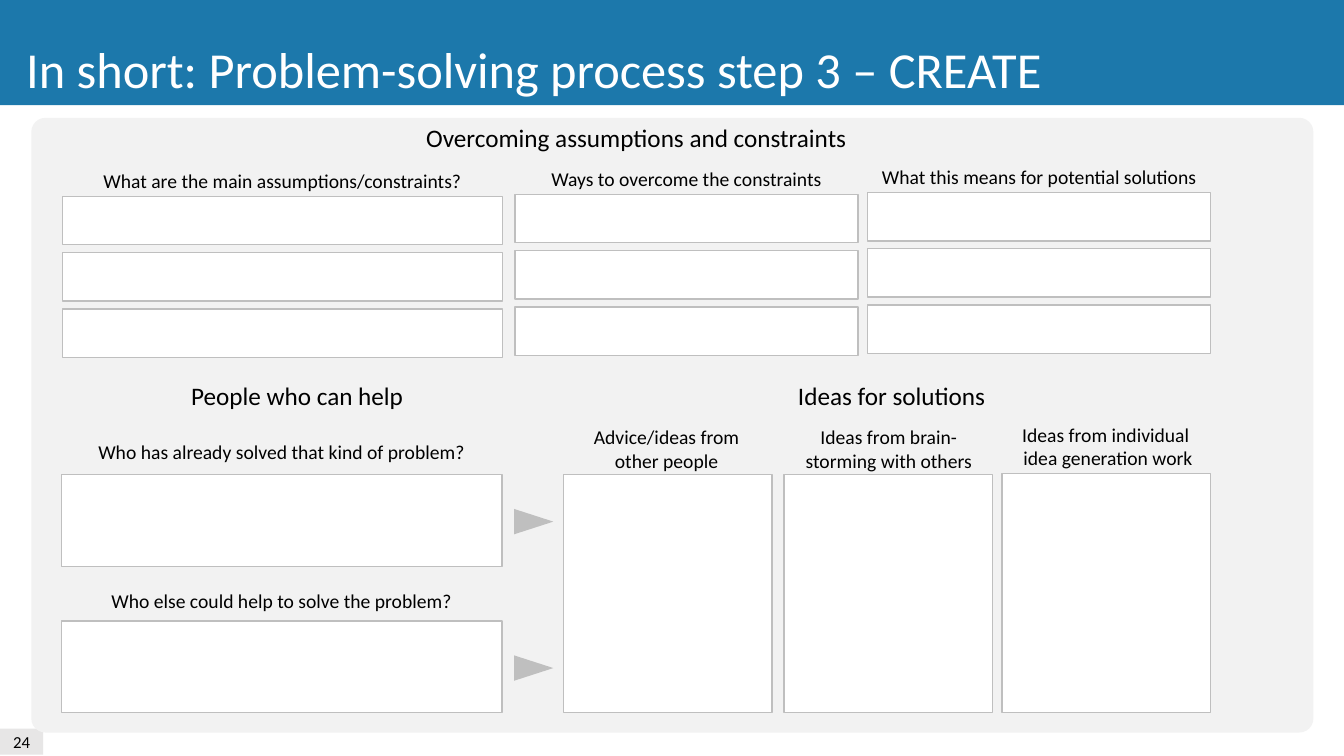
from dataclasses import dataclass

import pptx
import pptx.dml.color
import pptx.enum.shapes
import pptx.enum.text
import pptx.util

Cm = pptx.util.Cm
Pt = pptx.util.Pt
SHAPE = pptx.enum.shapes.MSO_SHAPE
ALIGN = pptx.enum.text.PP_ALIGN
ANCHOR = pptx.enum.text.MSO_ANCHOR
AUTO_SIZE = pptx.enum.text.MSO_AUTO_SIZE

BLUE, WHITE, BLACK = "1C78AB", "FFFFFF", "000000"
PANEL, GREY, PAGE_GREY = "F2F2F2", "BFBFBF", "E7E6E6"


@dataclass(frozen=True)
class Box:
    """Position and size in centimetres."""
    left: float
    top: float
    width: float
    height: float


@dataclass(frozen=True)
class Label:
    text: str
    box: Box
    size: int = 14


@dataclass(frozen=True)
class ConstraintColumn:
    text: str
    left: float
    top: float
    width: float


@dataclass(frozen=True)
class Field:
    """A label with the blank box to fill in."""
    label: Label
    box: Box


ROWS, ROW_HEIGHT, ROW_PITCH = 3, 1.22, 1.42
LABEL_HEIGHT, LABEL_RISE = 0.86, 0.81
ARROW_LEFT, ARROW_DROP = 13.13, 0.69

HEADINGS = [
    Label("Overcoming assumptions and constraints", Box(1.57, 2.97, 28.93, 1.02), 18),
    Label("People who can help", Box(1.8, 9.47, 11.38, 1.02), 18),
    Label("Ideas for solutions", Box(14.2, 9.47, 16.54, 1.02), 18),
]
CONSTRAINTS = [
    ConstraintColumn("What are the main assumptions/constraints?", 1.57, 4.95, 11.1),
    ConstraintColumn("Ways to overcome the constraints", 12.98, 4.9, 8.64),
    ConstraintColumn("What this means for potential solutions", 21.87, 4.85, 8.64),
]
PEOPLE = [
    Field(Label("Who has already solved that kind of problem?",
                Box(1.55, 10.95, 11.1, LABEL_HEIGHT)), Box(1.55, 11.96, 11.1, 2.31)),
    Field(Label("Who else could help to solve the problem?",
                Box(1.55, 14.71, 11.1, LABEL_HEIGHT)), Box(1.55, 15.65, 11.1, 2.31)),
]
IDEAS = [
    Field(Label("Advice/ideas from\nother people",
                Box(13.84, 10.59, 5.92, 1.45)), Box(14.2, 11.96, 5.26, 6)),
    Field(Label("Ideas from brain-storming with others",
                Box(19.81, 10.59, 5.18, 1.45)), Box(19.76, 11.96, 5.26, 6)),
    Field(Label("Ideas from individual \nidea generation work",
                Box(25.32, 10.52, 5.21, 1.45)), Box(25.25, 11.94, 5.26, 6.02)),
]


def rgb(value: str) -> pptx.dml.color.RGBColor:
    return pptx.dml.color.RGBColor.from_string(value)


def place(box: Box) -> tuple:
    return Cm(box.left), Cm(box.top), Cm(box.width), Cm(box.height)


def write(sp, text: str, size: int, color: str = BLACK, align=ALIGN.CENTER) -> None:
    p = sp.text_frame.paragraphs[0]
    p.alignment = align
    for i, line in enumerate(text.split("\n")):
        if i:
            p.add_line_break()
        r = p.add_run()
        r.text = line
        for name, value in {"size": Pt(size), "name": "Calibri"}.items():
            setattr(r.font, name, value)
        r.font.color.rgb = rgb(color)


def add_shape(s, kind, box: Box, fill: str, line: str = ""):
    sp = s.shapes.add_shape(kind, *place(box))
    sp.shadow.inherit = False
    sp.fill.solid()
    sp.fill.fore_color.rgb = rgb(fill)
    if line:
        sp.line.color.rgb = rgb(line)
        sp.line.width = Pt(1)
    else:
        sp.line.fill.background()
    return sp


def add_label(s, label: Label, color: str = BLACK, align=ALIGN.CENTER,
              wrap: bool = True) -> None:
    sp = s.shapes.add_textbox(*place(label.box))
    tf = sp.text_frame
    for name, value in {"word_wrap": wrap, "auto_size": AUTO_SIZE.SHAPE_TO_FIT_TEXT}.items():
        setattr(tf, name, value)
    write(sp, label.text, label.size, color, align)


def add_blank(s, box: Box) -> None:
    add_shape(s, SHAPE.RECTANGLE, box, WHITE, GREY)


def add_constraint_column(s, column: ConstraintColumn) -> None:
    for row in range(ROWS):
        add_blank(s, Box(column.left, column.top + row * ROW_PITCH, column.width, ROW_HEIGHT))
    add_label(s, Label(column.text, Box(column.left, column.top - LABEL_RISE,
                                        column.width, LABEL_HEIGHT)))


def add_field(s, field: Field) -> None:
    add_blank(s, field.box)
    add_label(s, field.label)


def main() -> None:
    prs = pptx.Presentation()
    prs.slide_width, prs.slide_height = Cm(33.87), Cm(19.05)
    s = prs.slides.add_slide(prs.slide_layouts[6])

    add_shape(s, SHAPE.RECTANGLE, Box(0, -0.02, 33.88, 2.67), BLUE)
    page = add_shape(s, SHAPE.RECTANGLE, Box(0, 18.36, 1.09, 0.66), PAGE_GREY)
    page.text_frame.vertical_anchor = ANCHOR.MIDDLE
    write(page, "24", 12)
    title = Label("In short: Problem-solving process step 3 – CREATE",
                  Box(0.41, 0.84, 26.37, 1.8), 36)
    add_label(s, title, WHITE, ALIGN.LEFT, wrap=False)
    panel = add_shape(s, SHAPE.ROUNDED_RECTANGLE, Box(0.79, 2.97, 32.31, 15.49), PANEL)
    panel.adjustments[0] = 0.023

    for heading in HEADINGS:
        add_label(s, heading)
    for column in CONSTRAINTS:
        add_constraint_column(s, column)
    for field in PEOPLE + IDEAS:
        add_field(s, field)
    for field in PEOPLE:
        arrow = add_shape(s, SHAPE.ISOSCELES_TRIANGLE,
                          Box(ARROW_LEFT, field.box.top + ARROW_DROP, 0.64, 0.99), GREY)
        arrow.rotation = 90

    prs.save("out.pptx")


if __name__ == "__main__":
    main()
